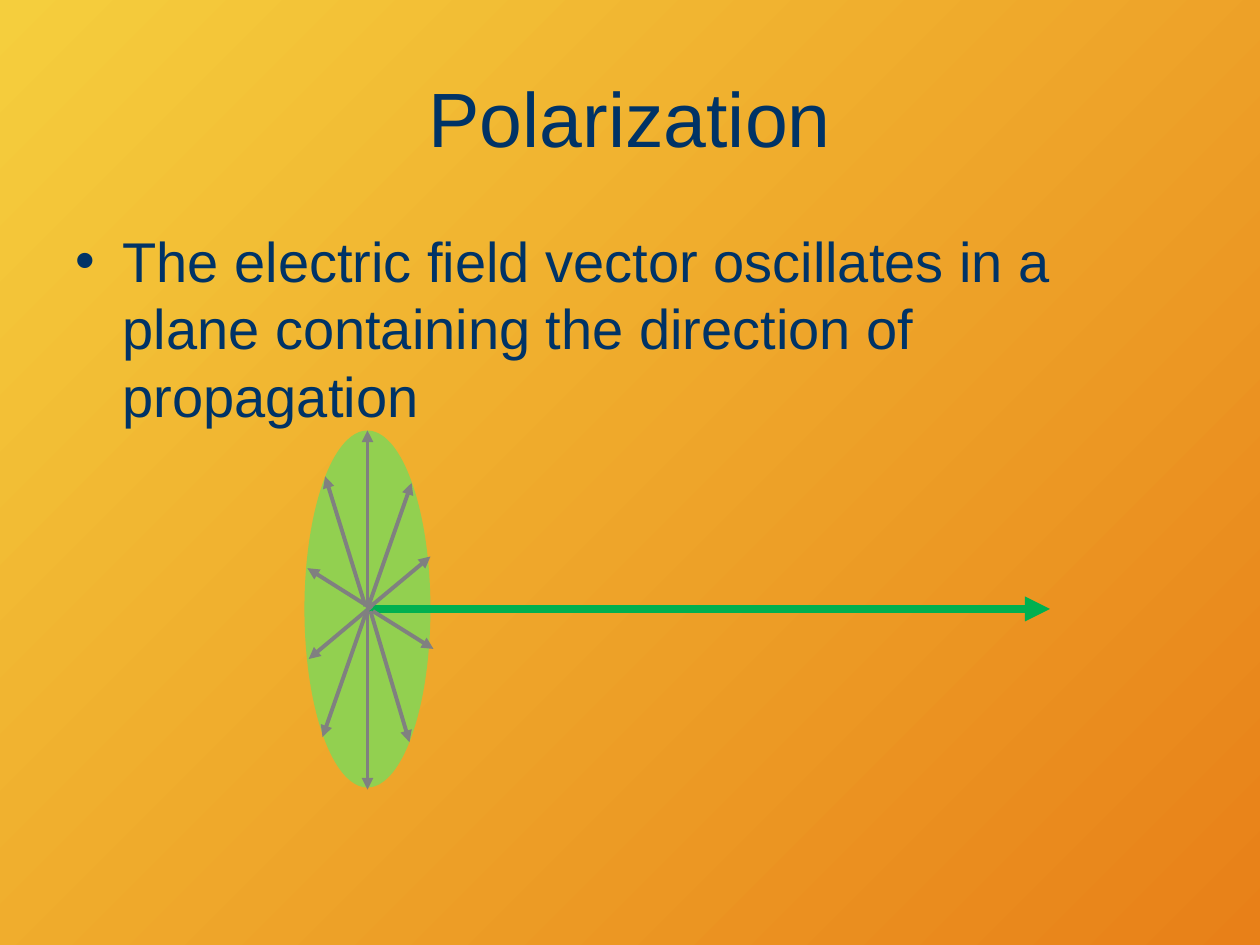
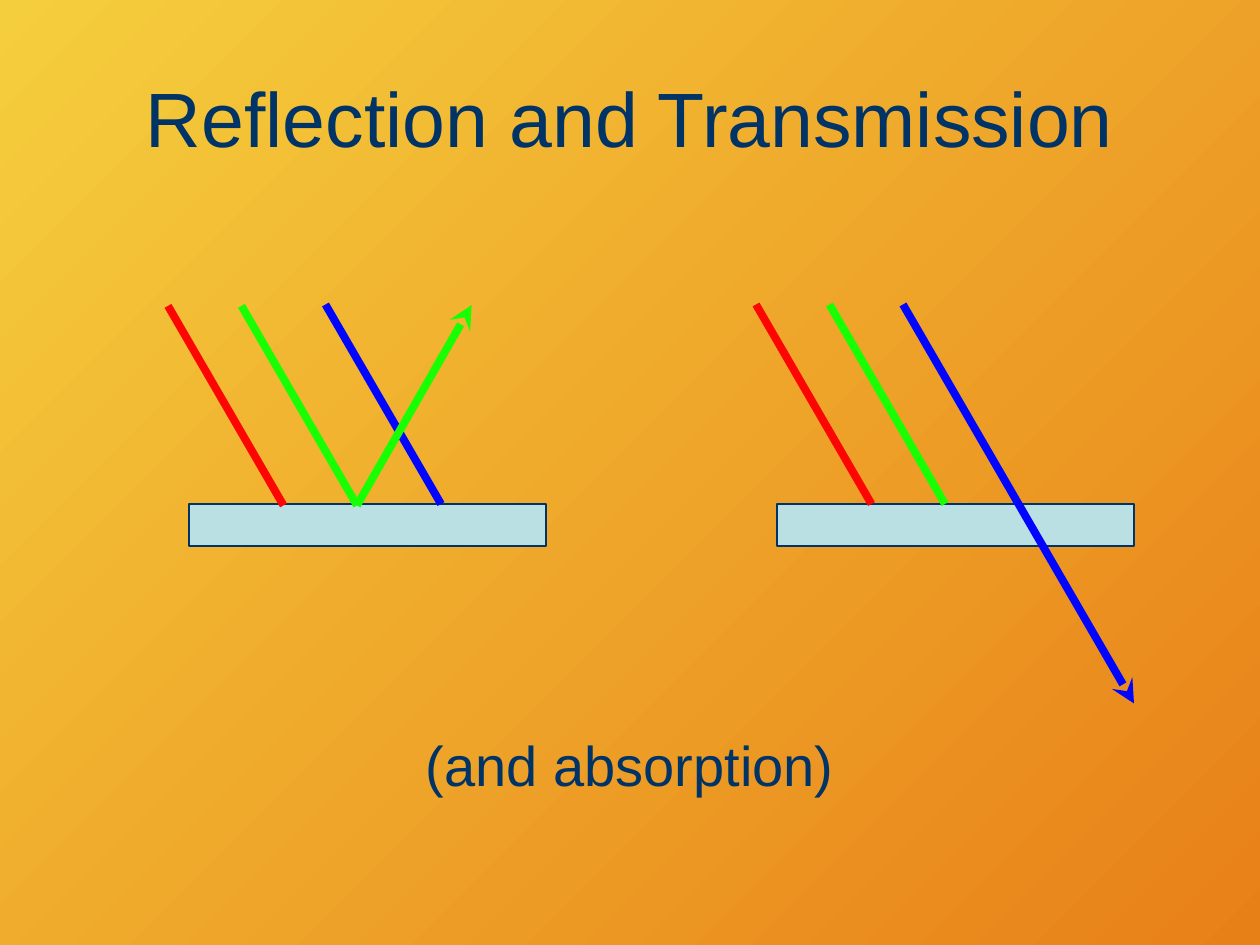
import pptx
import pptx.util
import pptx.dml.color
import pptx.enum.shapes
import pptx.enum.text
import pptx.oxml.ns
from lxml import etree

Pt = pptx.util.Pt
Shape = pptx.enum.shapes.MSO_SHAPE
Align = pptx.enum.text.PP_ALIGN
Anchor = pptx.enum.text.MSO_ANCHOR
Fit = pptx.enum.text.MSO_AUTO_SIZE

# Shared look
FONT = "Arial"
NAVY, GRAY = "003366", "808080"
RED, GREEN, BLUE = "FF0502", "18FF04", "0105FF"
BACK = ("F5CE3D", "E88018")

# Field vectors: start and end of each
FIELD = [
    (210, 348, 210, 246), (210, 348, 235.2, 276), (210, 348, 246, 318),
    (210, 349.2, 210, 451.2), (209.5, 349.2, 184.3, 421.2),
    (212.4, 346.4, 176.4, 376.6), (208.8, 346.4, 185.8, 272.2),
    (210.2, 346.4, 175.7, 324.7), (211.7, 349.2, 234, 424.1),
    (213.1, 349.2, 247.7, 370.8),
]

# A ray falls from the sky line to the slab by RUN across and DROP down
SKY, RUN, DROP = 174, 66, 114
SLAB = SKY + DROP


def color(code):
    return pptx.dml.color.RGBColor.from_string(code)


def tag(parent, name, **attrs):
    return etree.SubElement(parent, pptx.oxml.ns.qn(name), attrs)


def place(shape, box):
    shape.left, shape.top, shape.width, shape.height = map(Pt, box)


def write(frame, text, size, align):
    frame.text = text
    frame.word_wrap = True
    para = frame.paragraphs[0]
    para.alignment = align
    font = para.runs[0].font
    font.name, font.size = FONT, Pt(size)
    font.color.rgb = color(NAVY)


def add_page(deck, title):
    slide = deck.slides.add_slide(deck.slide_layouts[5])
    head = slide.shapes.title
    place(head, (36, 21.6, 648, 90))
    write(head.text_frame, title, 44, Align.CENTER)
    head.text_frame.vertical_anchor = Anchor.MIDDLE
    head.text_frame.auto_size = Fit.NONE
    return slide


def add_text(slide, box, text, align, bullet=False):
    frame = slide.shapes.add_textbox(*map(Pt, box)).text_frame
    write(frame, text, 32, align)
    frame.auto_size = Fit.NONE if bullet else Fit.SHAPE_TO_FIT_TEXT
    if bullet:
        props = frame.paragraphs[0]._p.get_or_add_pPr()
        props.set("marL", str(Pt(27)))
        props.set("indent", str(-Pt(27)))
        tag(props, "a:buFont", typeface=FONT)
        tag(props, "a:buChar", char="•")


def add_form(shapes, kind, box, fill, edge=None):
    form = shapes.add_shape(kind, *map(Pt, box))
    form.shadow.inherit = False
    form.fill.solid()
    form.fill.fore_color.rgb = color(fill)
    if edge:
        form.line.color.rgb = color(edge)
        form.line.width = Pt(0.75)
    else:
        form.line.fill.background()


def add_line(shapes, ends, shade, width, tip=None):
    kind = pptx.enum.shapes.MSO_CONNECTOR.STRAIGHT
    link = shapes.add_connector(kind, *map(Pt, ends))
    link.line.color.rgb = color(shade)
    link.line.width = Pt(width)
    if tip:
        tag(link.line._get_or_add_ln(), "a:tailEnd", type=tip)
    tag(link._element.spPr, "a:effectLst")


def add_ray(shapes, x, shade, top=SKY, steps=1, tip=None):
    ends = (x, top, x + steps * RUN, top + steps * DROP)
    add_line(shapes, ends, shade, 4.5, tip)


def add_slab(slide, left):
    shapes = slide.shapes.add_group_shape().shapes
    add_form(shapes, Shape.RECTANGLE, (left, SLAB, 204, 24), "BBE0E3", NAVY)
    return shapes


def draw_field(deck):
    slide = add_page(deck, "Polarization")
    add_text(slide, (36, 126, 648, 144),
             "The electric field vector oscillates in a plane "
             "containing the direction of propagation", Align.LEFT, True)
    add_form(slide.shapes, Shape.OVAL, (174, 246, 72, 204), "92D050")
    # Direction of travel, then the field vectors
    add_line(slide.shapes, (210, 348, 600, 348), "00B050", 4.75, "triangle")
    for ends in FIELD:
        add_line(slide.shapes, ends, GRAY, 2.25, "triangle")


def draw_rays(deck):
    slide = add_page(deck, "Reflection and Transmission")
    # Transmission: blue passes through
    right = add_slab(slide, 444)
    add_ray(right, 432, RED)
    add_ray(right, 474, GREEN)
    add_ray(right, 516, BLUE, steps=2, tip="stealth")
    # Reflection: green bounces back
    left = add_slab(slide, 108)
    add_ray(left, 96, RED, SKY + 0.8)
    add_ray(left, 138, GREEN, SKY + 0.8)
    add_ray(left, 186, BLUE)
    add_line(left, (204, SLAB + 0.8, 269.5, SKY + 0.4), GREEN, 4.5, "stealth")
    add_text(slide, (222, 414, 276, 45.4), "(and absorption)", Align.CENTER)


def main():
    deck = pptx.Presentation()
    deck.slide_width, deck.slide_height = Pt(720), Pt(540)
    # Diagonal background on the master
    fill = deck.slide_master.background.fill
    fill.gradient()
    fill.gradient_angle = 315
    for stop, shade in zip(fill.gradient_stops, BACK):
        stop.color.rgb = color(shade)
    draw_field(deck)
    draw_rays(deck)
    deck.save("out.pptx")


if __name__ == "__main__":
    main()
